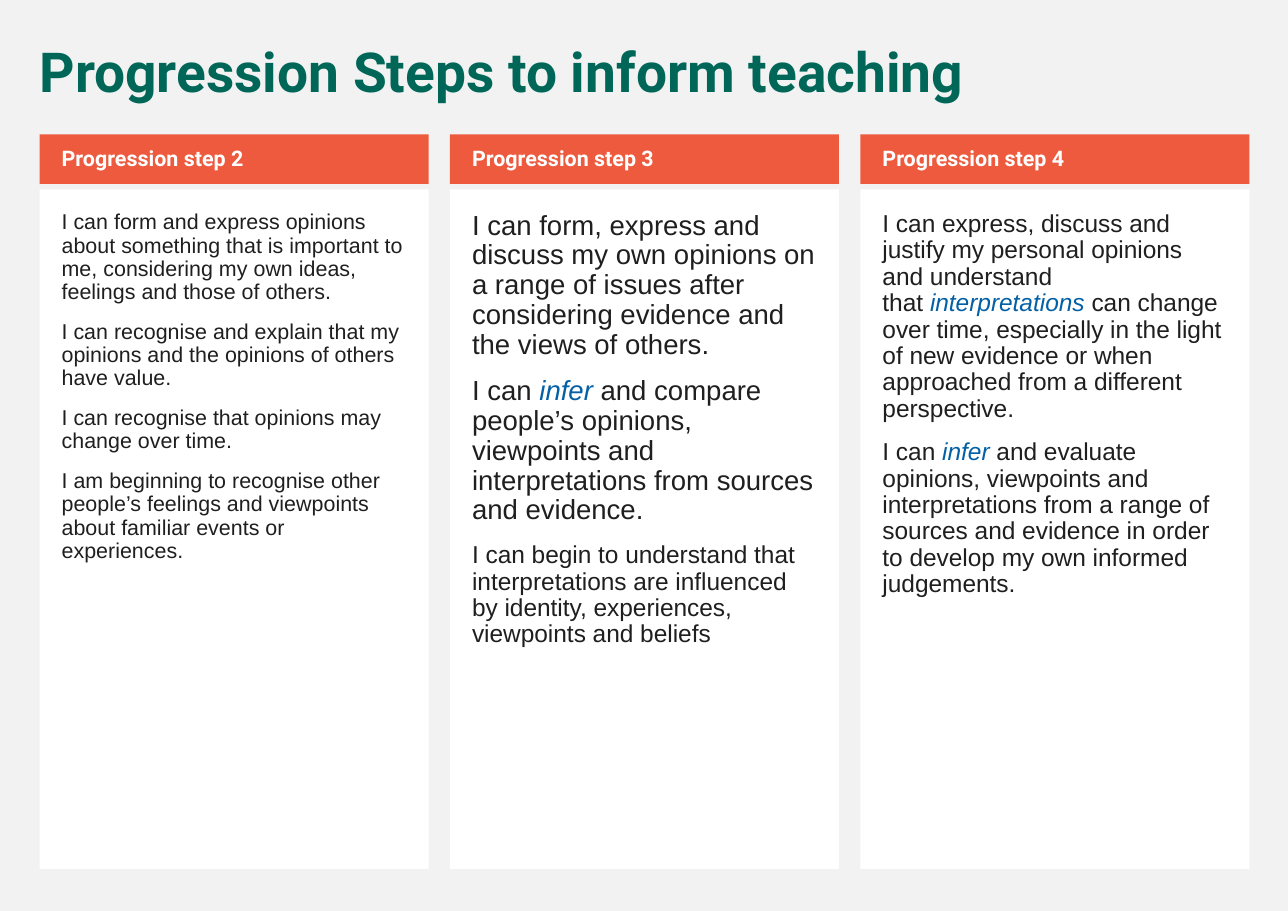
from pptx import Presentation
from pptx.dml.color import RGBColor
from pptx.enum.shapes import MSO_SHAPE
from pptx.enum.text import MSO_ANCHOR, PP_ALIGN
from pptx.util import Pt

COLORS = {
    "background": "F2F2F2",
    "title": "006758",
    "header": "ED5A3E",
    "white": "FFFFFF",
    "text": "1F1F1F",
    "term": "0360A6",
}
NBSP = chr(160)

# Each column: heading, then (size, statement); * marks key terms, ~ a fixed space
COLUMNS = [
    ("Progression step 2", [
        (14, "I~can form and express opinions about something that is important to me, "
             "considering my own ideas, feelings and those of others."),
        (14, "I can recognise and explain that my opinions and the opinions of others "
             "have value."),
        (14, "I can recognise that opinions may change over time."),
        (14, "I am beginning to recognise other people’s feelings and viewpoints about "
             "familiar events or experiences."),
    ]),
    ("Progression step 3", [
        (18, "I can form, express and discuss my own opinions on a range of issues after "
             "considering evidence and the views of others."),
        (18, "I can~*infer*~and compare people’s opinions, viewpoints and "
             "interpretations from sources and evidence."),
        (16, "I can begin to understand that interpretations are influenced by identity, "
             "experiences, viewpoints and beliefs"),
    ]),
    ("Progression step 4", [
        (16, "I can express, discuss and justify my personal opinions and understand "
             "that~*interpretations*~can change over time, especially in the light of "
             "new evidence or when approached from a different perspective."),
        (16, "I can~*infer*~and evaluate opinions, viewpoints and interpretations from "
             "a range of sources and evidence in order to develop my own informed "
             "judgements."),
    ]),
]


def add_text(p, text, size, font="Arial", color="text", bold=False, before=0):
    p.alignment = PP_ALIGN.LEFT
    p.line_spacing = 0.9
    p.space_before = Pt(before)
    for i, part in enumerate(text.replace("~", NBSP).split("*")):
        is_term = i % 2 == 1
        r = p.add_run()
        r.text = part
        r.font.name = font
        r.font.size = Pt(size)
        r.font.bold = bold
        r.font.italic = is_term
        r.font.color.rgb = RGBColor.from_string(COLORS["term" if is_term else color])


def add_box(left, top, width, height, fill, anchor, insets):
    sp = s.shapes.add_shape(MSO_SHAPE.RECTANGLE, Pt(left), Pt(top), Pt(width), Pt(height))
    sp.shadow.inherit = False
    sp.fill.solid()
    sp.fill.fore_color.rgb = RGBColor.from_string(COLORS[fill])
    sp.line.fill.background()
    tf = sp.text_frame
    tf.word_wrap = True
    tf.vertical_anchor = anchor
    tf.margin_left, tf.margin_top, tf.margin_right, tf.margin_bottom = map(Pt, insets)
    return tf


prs = Presentation()
prs.slide_width, prs.slide_height = Pt(841.68), Pt(595.44)
s = prs.slides.add_slide(prs.slide_layouts[6])
s.background.fill.solid()
s.background.fill.fore_color.rgb = RGBColor.from_string(COLORS["background"])

# Title
tf = s.shapes.add_textbox(Pt(18.7), Pt(25.9), Pt(797.8), Pt(46.8)).text_frame
tf.word_wrap = True
add_text(tf.paragraphs[0], "Progression Steps to inform teaching", 36,
         font="Roboto", color="title", bold=True)

# Columns
LEFT, PITCH, WIDTH = 25.9, 268.2, 254.2
for col, (heading, statements) in enumerate(COLUMNS):
    left = LEFT + col * PITCH

    # Statements panel
    tf = add_box(left, 123.8, WIDTH, 444.2, "white", MSO_ANCHOR.TOP, (14.4,) * 4)
    for i, (size, statement) in enumerate(statements):
        p = tf.add_paragraph() if i else tf.paragraphs[0]
        add_text(p, statement, size, before=11 if i else 0)

    # Heading bar
    tf = add_box(left, 87.8, WIDTH, 32.4, "header", MSO_ANCHOR.MIDDLE, (14.4, 3.6, 7.2, 3.6))
    add_text(tf.paragraphs[0], heading, 14, font="Roboto", color="white", bold=True)

prs.save("out.pptx")
